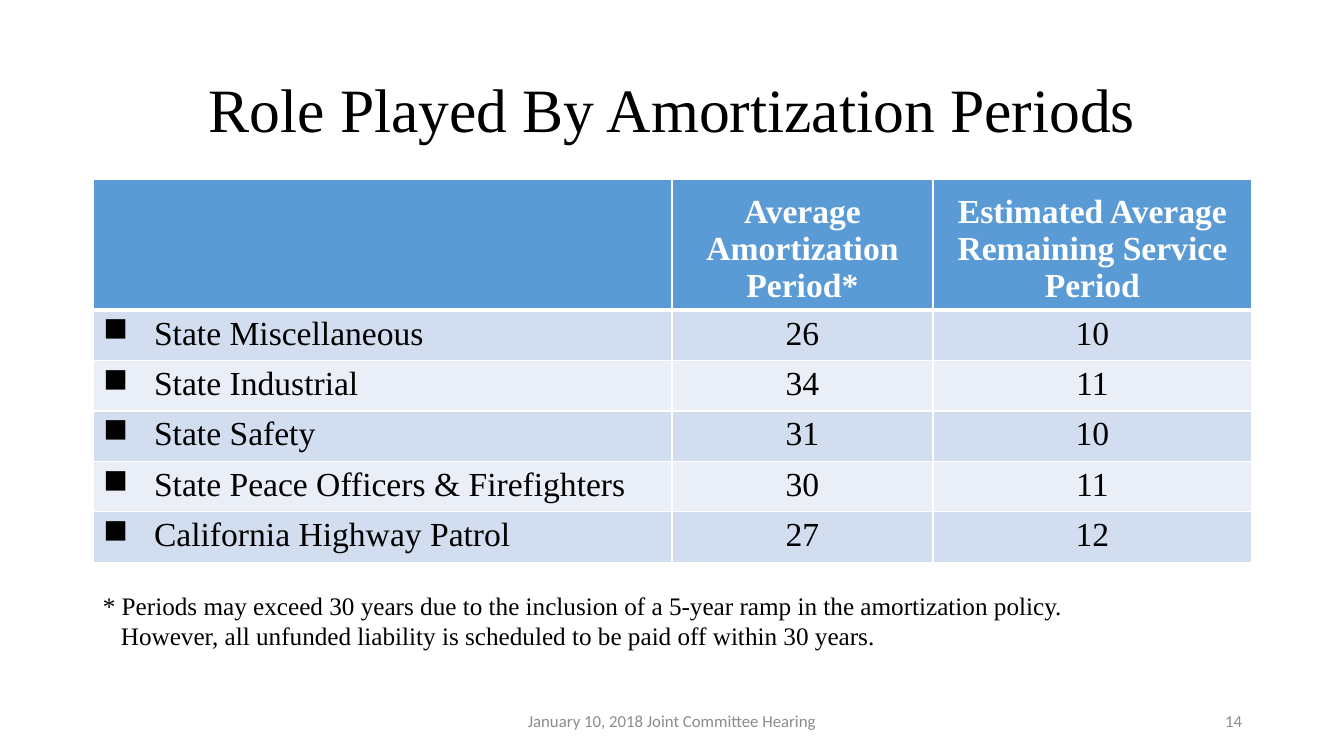
from lxml import etree
from pptx import Presentation
from pptx import util as u
from pptx.dml.color import RGBColor
from pptx.enum import text
from pptx.oxml import ns

PX = 9071.43  # EMU per px, 100.8 px to the inch
HUE = {"ink": "000000", "head": "5B9BD5", "dark": "D2DEEF",
       "light": "EAEFF7", "line": "FFFFFF", "grey": "8C8C8C"}
SERIF, SANS = "Times New Roman", "Calibri"
LEFT, MID, RIGHT = text.PP_ALIGN.LEFT, text.PP_ALIGN.CENTER, text.PP_ALIGN.RIGHT
TOP, CENTER = text.MSO_ANCHOR.TOP, text.MSO_ANCHOR.MIDDLE


def px(n):
    return u.Emu(round(n * PX))


def write(para, words, size, font, hue, align, bold=False):
    para.alignment = align
    run = para.add_run()
    run.text = words
    run.font.size = u.Pt(size)
    run.font.name = font
    run.font.bold = bold
    run.font.color.rgb = RGBColor.from_string(HUE[hue])


deck = Presentation()
deck.slide_width, deck.slide_height = px(1344), px(756)
slide = deck.slides.add_slide(deck.slide_layouts[6])

# Title, footer, page number and footnote
notes = [
    ("Role Played By Amortization Periods",
     (93, 40, 1159, 146), 44, SERIF, "ink", MID, CENTER),
    ("January 10, 2018 Joint Committee Hearing",
     (445, 701, 454, 40), 12, SANS, "grey", MID, CENTER),
    ("14", (950, 701, 302, 40), 12, SANS, "grey", RIGHT, CENTER),
    ("* Periods may exceed 30 years due to the inclusion of a 5-year ramp in the "
     "amortization policy. However, all unfunded liability is scheduled to be "
     "paid off within 30 years.",
     (93, 585, 1003, 72), 18, SERIF, "ink", LEFT, TOP),
]
for words, area, size, font, hue, align, anchor in notes:
    frame = slide.shapes.add_textbox(*map(px, area)).text_frame
    frame.word_wrap = True
    frame.vertical_anchor = anchor
    write(frame.paragraphs[0], words, size, font, hue, align)
    if size == 44:
        frame.paragraphs[0].line_spacing = 0.9

# Hanging indent of the footnote
hang = frame.paragraphs[0]._p.get_or_add_pPr()
hang.set("marL", str(px(18)))
hang.set("indent", str(-px(18)))

# Table of periods
rows = [
    ("", "Average Amortization Period*", "Estimated Average Remaining Service Period"),
    ("State Miscellaneous", "26", "10"),
    ("State Industrial", "34", "11"),
    ("State Safety", "31", "10"),
    ("State Peace Officers & Firefighters", "30", "11"),
    ("California Highway Patrol", "27", "12"),
]
table = slide.shapes.add_table(len(rows), 3, px(93), px(179), px(1159), px(355)).table
for col, wide in zip(table.columns, (579, 261, 319)):
    col.width = px(wide)

for r, row in enumerate(rows):
    table.rows[r].height = px(47 if r else 120)
    for c, words in enumerate(row):
        cell = table.cell(r, c)
        fill = ("dark" if r % 2 else "light") if r else "head"
        cell.fill.solid()
        cell.fill.fore_color.rgb = RGBColor.from_string(HUE[fill])
        cell.vertical_anchor = TOP if r else text.MSO_ANCHOR.BOTTOM

        # White borders, thick under the header
        props = cell._tc.get_or_add_tcPr()
        for i, side in enumerate(("lnL", "lnR", "lnT", "lnB")):
            thick = (side, r) in (("lnB", 0), ("lnT", 1))
            edge = etree.Element(ns.qn("a:" + side), w=str(u.Pt(3 if thick else 1)))
            paint = etree.SubElement(edge, ns.qn("a:solidFill"))
            etree.SubElement(paint, ns.qn("a:srgbClr"), val=HUE["line"])
            props.insert(i, edge)

        if not words:
            continue
        para = cell.text_frame.paragraphs[0]
        write(para, words, 24, SERIF, "ink" if r else "line", MID if c else LEFT, not r)

        # Square bullets in the first column
        if c == 0:
            hang = para._p.get_or_add_pPr()
            hang.set("marL", str(px(51)))
            hang.set("indent", str(-px(51)))
            etree.SubElement(hang, ns.qn("a:buChar"), char="■")

deck.save("out.pptx")
